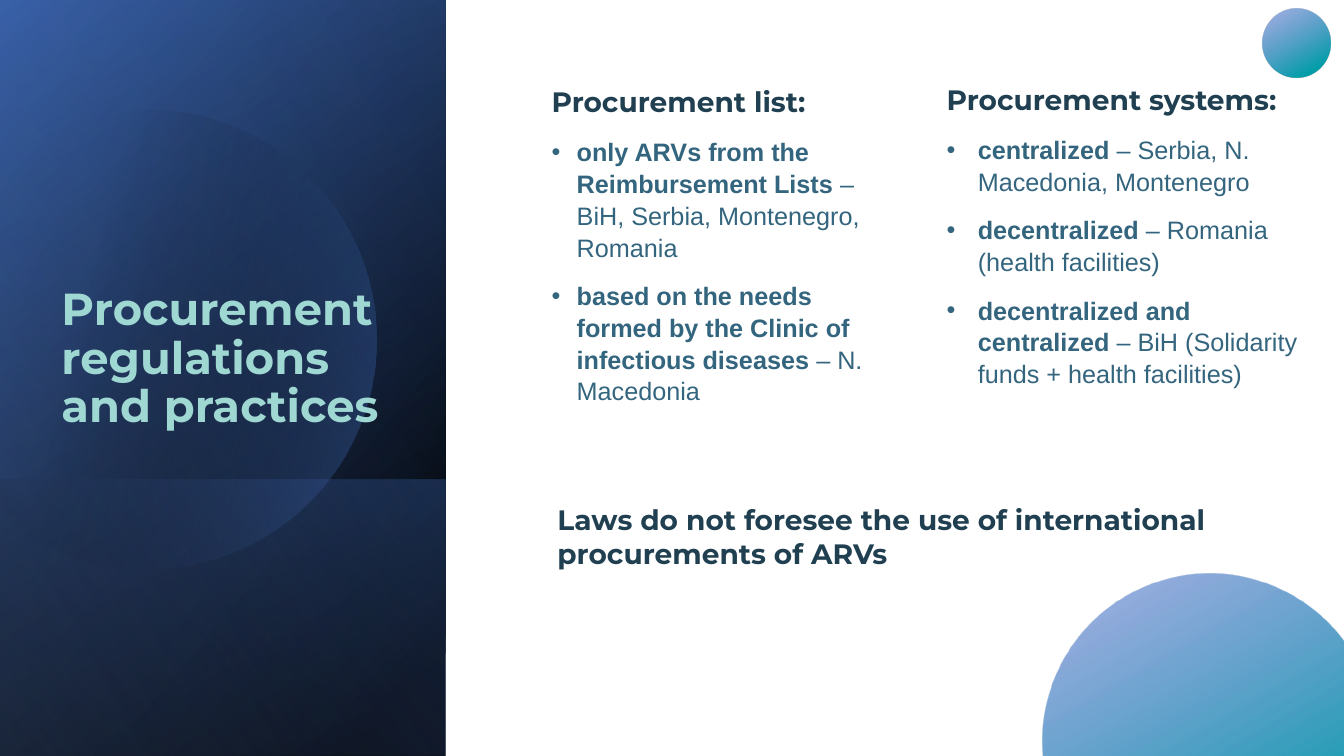
import math

from lxml import etree
from pptx import Presentation
from pptx.dml.color import RGBColor
from pptx.enum.shapes import MSO_SHAPE
from pptx.enum.text import MSO_ANCHOR, MSO_AUTO_SIZE, PP_ALIGN
from pptx.oxml.ns import qn
from pptx.util import Inches, Pt

RECTANGLE, OVAL = MSO_SHAPE.RECTANGLE, MSO_SHAPE.OVAL
TOP, BOTTOM = MSO_ANCHOR.TOP, MSO_ANCHOR.BOTTOM
NO_AUTOFIT, LEFT = MSO_AUTO_SIZE.NONE, PP_ALIGN.LEFT

WHITE = RGBColor(0xFF, 0xFF, 0xFF)
BLACK = RGBColor(0, 0, 0)
NAVY = RGBColor(0x2F, 0x54, 0x96)
BLUE = RGBColor(0x44, 0x72, 0xC4)
PALE_BLUE = RGBColor(0x8D, 0xA9, 0xDB)
TEAL = RGBColor(0x00, 0x9F, 0xA8)
MINT = RGBColor(0x9F, 0xD7, 0xD2)
HEADING = RGBColor(0x20, 0x40, 0x51)
BODY = RGBColor(0x34, 0x65, 0x7E)

HEADING_FONT, BODY_FONT = "Montserrat", "Arial"
PAGE_WIDTH, PAGE_HEIGHT, PANEL_WIDTH = 13.33, 7.5, 4.42

# Gradient stops: position %, colour, opacity %
PANEL_BASE = [(0, BLACK, 100), (8, BLACK, 100), (100, NAVY, 100)]
PANEL_GLOW = [(0, BLACK, 0), (99, BLUE, 46), (100, BLUE, 46)]
LOWER_BAND = [(0, BLUE, 29), (2, BLUE, 29), (100, BLACK, 30)]
PANEL_DISC = [(0, BLACK, 0), (29, BLACK, 0), (100, BLUE, 43)]
PANEL_SHEEN = [(0, BLACK, 0), (99, PALE_BLUE, 11), (100, PALE_BLUE, 11)]
BUBBLE = [(0, TEAL, 100), (15, TEAL, 100), (85, BLUE, 59), (100, BLUE, 59)]

PROCUREMENT_LIST = [
    ("only ARVs from the Reimbursement Lists ", "– BiH, Serbia, Montenegro, Romania"),
    ("based on the needs formed by the Clinic of infectious diseases ", "– N. Macedonia"),
]
PROCUREMENT_SYSTEMS = [
    ("centralized", " – Serbia, N. Macedonia, Montenegro"),
    ("decentralized", " – Romania (health facilities)"),
    ("decentralized and centralized ", "– BiH (Solidarity funds + health facilities)"),
]


def strip_style(shape):
    shape.shadow.inherit = False
    shape.line.fill.background()


def fill_gradient(shape, stops, angle):
    """Fill with stops along an angle measured clockwise in degrees."""
    strip_style(shape)
    shape.fill.gradient()
    gradient = shape.element.spPr.find(qn("a:gradFill"))
    for child in list(gradient):
        gradient.remove(child)
    stop_list = etree.SubElement(gradient, qn("a:gsLst"))
    for position, color, opacity in stops:
        stop = etree.SubElement(stop_list, qn("a:gs"), pos=str(position * 1000))
        tone = etree.SubElement(stop, qn("a:srgbClr"), val=str(color))
        if opacity < 100:
            etree.SubElement(tone, qn("a:alpha"), val=str(opacity * 1000))
    etree.SubElement(gradient, qn("a:lin"), ang=str(angle * 60000), scaled="0")


def add_panel_layer(page, top, stops, angle):
    """Cover the left panel from top to the page's foot with a turned rectangle."""
    length = PAGE_HEIGHT - top
    layer = page.shapes.add_shape(
        RECTANGLE,
        Inches((PANEL_WIDTH - length) / 2),
        Inches(top + (length - PANEL_WIDTH) / 2),
        Inches(length), Inches(PANEL_WIDTH))
    layer.rotation = 90
    layer.element.spPr.find(qn("a:xfrm")).set("flipH", "1")
    fill_gradient(layer, stops, angle)


def add_panel_disc(page, center_x, center_y, radius, cut_x):
    """Draw a disc whose left side is cut straight at cut_x."""
    reach = math.acos((cut_x - center_x) / radius)
    steps = 120
    points = []
    for step in range(steps + 1):
        turn = reach * (2 * step / steps - 1)
        points.append((Inches(center_x + radius * math.cos(turn)),
                       Inches(center_y + radius * math.sin(turn))))
    builder = page.shapes.build_freeform(*points[0])
    builder.add_line_segments(points[1:], close=True)
    fill_gradient(builder.convert_to_shape(), PANEL_DISC, 14)


def add_bubble(page, left, top, size):
    bubble = page.shapes.add_shape(
        OVAL, Inches(left), Inches(top), Inches(size), Inches(size))
    fill_gradient(bubble, BUBBLE, 240)


def place(page, box, left, top, width, height, anchor=TOP):
    """Position a text holder, bring it to the front and return its frame."""
    box.left, box.top = Inches(left), Inches(top)
    box.width, box.height = Inches(width), Inches(height)
    page.shapes.element.append(box.element)
    frame = box.text_frame
    frame.word_wrap = True
    frame.auto_size = NO_AUTOFIT
    frame.vertical_anchor = anchor
    return frame


def add_text_box(page, left, top, width, height):
    box = page.shapes.add_textbox(0, 0, 0, 0)
    return place(page, box, left, top, width, height)


def style(para, font_name, size, color):
    para.alignment = LEFT
    para.font.name = font_name
    para.font.size = Pt(size)
    para.font.color.rgb = color


def write_heading(frame, text, size=20, color=HEADING):
    para = frame.paragraphs[0]
    para.text = text
    style(para, HEADING_FONT, size, color)
    para.font.bold = True
    para.space_before = Pt(0)
    properties = para._p.get_or_add_pPr()
    properties.set("marL", "0")
    properties.set("indent", "0")
    properties.insert_element_before(
        etree.Element(qn("a:buNone")), "a:tabLst", "a:defRPr", "a:extLst")


def write_bullets(frame, items, indent):
    for lead, detail in items:
        para = frame.add_paragraph()
        style(para, BODY_FONT, 18, BODY)
        para.space_before = Pt(12)
        para.line_spacing = 1.05
        for text, bold in ((lead, True), (detail, False)):
            span = para.add_run()
            span.text = text
            span.font.bold = bold
        properties = para._p.get_or_add_pPr()
        properties.set("marL", str(Inches(indent)))
        properties.set("indent", str(-Inches(indent)))
        bullet_color = etree.Element(qn("a:buClr"))
        etree.SubElement(bullet_color, qn("a:srgbClr"), val=str(BODY))
        bullet_font = etree.Element(qn("a:buFont"), typeface=BODY_FONT)
        bullet = etree.Element(qn("a:buChar"), char="•")
        for part in (bullet_color, bullet_font, bullet):
            properties.insert_element_before(
                part, "a:tabLst", "a:defRPr", "a:extLst")


def main():
    deck = Presentation()
    deck.slide_width, deck.slide_height = Inches(PAGE_WIDTH), Inches(PAGE_HEIGHT)
    page = deck.slides.add_slide(deck.slide_layouts[1])

    # White backdrop
    backdrop = page.shapes.add_shape(
        RECTANGLE, 0, 0, deck.slide_width, deck.slide_height)
    strip_style(backdrop)
    backdrop.fill.solid()
    backdrop.fill.fore_color.rgb = WHITE

    # Layered left panel
    add_panel_layer(page, 0, PANEL_BASE, 50)
    add_panel_layer(page, 0, PANEL_GLOW, 30)
    add_panel_layer(page, 4.76, LOWER_BAND, 130)
    add_panel_disc(page, 1.45, 3.37, 2.28, -0.15)
    add_panel_layer(page, 0, PANEL_SHEEN, 120)

    # Title
    title = place(page, page.shapes.title, 0.51, 0.64, 3.76, 3.7, BOTTOM)
    write_heading(title, "Procurement regulations and practices", 32, MINT)
    title.paragraphs[0].line_spacing = 0.9

    # Two lists
    left_list = place(page, page.placeholders[1], 5.37, 0.79, 3.66, 3.2)
    write_heading(left_list, "Procurement list:")
    write_bullets(left_list, PROCUREMENT_LIST, 0.25)
    right_list = add_text_box(page, 9.29, 0.77, 3.89, 3.06)
    write_heading(right_list, "Procurement systems:")
    write_bullets(right_list, PROCUREMENT_SYSTEMS, 0.31)

    # Conclusion
    conclusion = add_text_box(page, 5.43, 4.94, 7.67, 1.19)
    write_heading(
        conclusion, "Laws do not foresee the use of international procurements of ARVs")

    # Corner bubbles
    add_bubble(page, 10.34, 5.69, 3.31)
    add_bubble(page, 12.52, 0.09, 0.68)

    deck.save("out.pptx")


if __name__ == "__main__":
    main()
